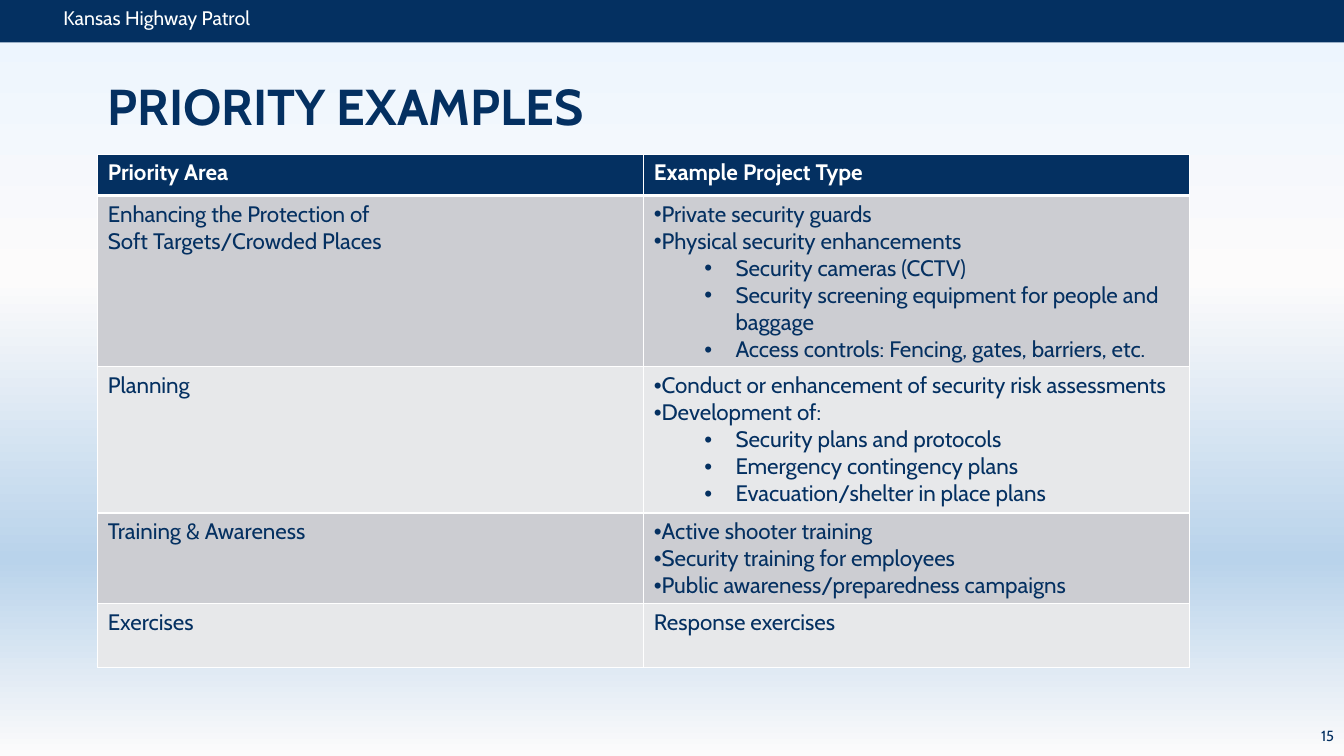
from lxml.etree import SubElement
from pptx import Presentation
from pptx.dml.color import RGBColor
from pptx.enum.shapes import MSO_SHAPE as SHAPE
from pptx.enum.text import MSO_ANCHOR as ANCHOR, PP_ALIGN as ALIGN
from pptx.oxml.ns import qn
from pptx.util import Inches, Pt

NAVY = RGBColor(0x04, 0x30, 0x61)
WHITE = RGBColor(0xFF, 0xFF, 0xFF)
BANDS = [RGBColor(0xCC, 0xCD, 0xD2), RGBColor(0xE7, 0xE8, 0xEA)]
SKY = [(0, RGBColor(0xEB, 0xF4, 0xFE)), (37, RGBColor(0xFC, 0xFB, 0xFB)),
       (74, RGBColor(0xB9, 0xD3, 0xEB)), (100, RGBColor(0xFC, 0xFB, 0xFB))]
LEFT, WIDTH = 0.97, 10.83

prs = Presentation()
prs.slide_width, prs.slide_height = Inches(13.33), Inches(7.5)
s = prs.slides.add_slide(prs.slide_layouts[6])

fill = s.background.fill
fill.gradient()
fill.gradient_angle = 270
stops = next(s.background._cSld.iter(qn("a:gsLst")))
for gs in list(stops):
    stops.remove(gs)
for pos, color in SKY:
    gs = SubElement(stops, qn("a:gs"), pos=str(pos * 1000))
    SubElement(gs, qn("a:srgbClr"), val=str(color))

sp = s.shapes.add_shape(SHAPE.RECTANGLE, Inches(-0.05), Inches(-0.03), Inches(13.38), Inches(0.45))
sp.shadow.inherit = False
sp.fill.solid()
sp.fill.fore_color.rgb = NAVY
sp.line.fill.background()


def add_run(p, text, size, color, bold=False):
    r = p.add_run()
    r.text = text
    r.font.name, r.font.size, r.font.bold = "Cabin", Pt(size), bold
    r.font.color.rgb = color


for text, box, size, color, bold, anchor, align, spacing in [
    ("Kansas Highway Patrol", (0.53, 0.01, 5.77, 0.34), 14, WHITE, False, ANCHOR.TOP, ALIGN.LEFT, 1),
    ("PRIORITY EXAMPLES", (LEFT, 0.04, WIDTH, 2.08), 36, NAVY, True, ANCHOR.MIDDLE, ALIGN.LEFT, 0.9),
    ("15", (12.49, 7.1, 0.84, 0.4), 10.5, NAVY, False, ANCHOR.MIDDLE, ALIGN.RIGHT, 1),
]:
    tf = s.shapes.add_textbox(*map(Inches, box)).text_frame
    tf.word_wrap, tf.vertical_anchor = True, anchor
    p = tf.paragraphs[0]
    p.alignment, p.line_spacing = align, spacing
    add_run(p, text, size, color, bold)

PLAIN, BULLET, SUB = range(3)
rows = [
    (0.41, ["Priority Area"], [(PLAIN, "Example Project Type")]),
    (1.7, ["Enhancing the Protection of", "Soft Targets/Crowded Places"], [
        (BULLET, "Private security guards"),
        (BULLET, "Physical security enhancements"),
        (SUB, "Security cameras (CCTV)"),
        (SUB, "Security screening equipment for people and baggage"),
        (SUB, "Access controls: Fencing, gates, barriers, etc.")]),
    (1.45, ["Planning"], [
        (BULLET, "Conduct or enhancement of security risk assessments"),
        (BULLET, "Development of:"),
        (SUB, "Security plans and protocols"),
        (SUB, "Emergency contingency plans"),
        (SUB, "Evacuation/shelter in place plans")]),
    (0.9, ["Training & Awareness"], [
        (BULLET, "Active shooter training"),
        (BULLET, "Security training for employees"),
        (BULLET, "Public awareness/preparedness campaigns")]),
    (0.63, ["Exercises"], [(PLAIN, "Response exercises")]),
]

table = s.shapes.add_table(len(rows), 2, Inches(LEFT), Inches(1.53), Inches(WIDTH),
                           Inches(sum(row[0] for row in rows))).table
for i, (height, area, examples) in enumerate(rows):
    table.rows[i].height = Inches(height)
    head = i == 0
    color = WHITE if head else NAVY
    for cell in table.rows[i].cells:
        tcPr = cell._tc.get_or_add_tcPr()
        for side in "LRTB":
            thick = (head and side == "B") or (i == 1 and side == "T")
            ln = SubElement(tcPr, qn("a:ln" + side), w=str(Pt(3 if thick else 1)))
            SubElement(SubElement(ln, qn("a:solidFill")), qn("a:srgbClr"), val=str(WHITE))
        cell.fill.solid()
        cell.fill.fore_color.rgb = NAVY if head else BANDS[(i - 1) % 2]

    p = table.cell(i, 0).text_frame.paragraphs[0]
    for n, line in enumerate(area):
        if n:
            p.add_line_break()
        add_run(p, line, 16, color, head)

    tf = table.cell(i, 1).text_frame
    for n, (kind, text) in enumerate(examples):
        p = tf.add_paragraph() if n else tf.paragraphs[0]
        if kind != PLAIN:
            pPr = p._p.get_or_add_pPr()
            pPr.set("marL", str(Inches(0.81) if kind == SUB else 0))
            pPr.set("indent", str(Inches(-0.31) if kind == SUB else 0))
            SubElement(pPr, qn("a:buFont"), typeface="Arial")
            SubElement(pPr, qn("a:buChar"), char="•")
            p.level = kind - BULLET
        add_run(p, text, 16, color, head)

prs.save("out.pptx")
